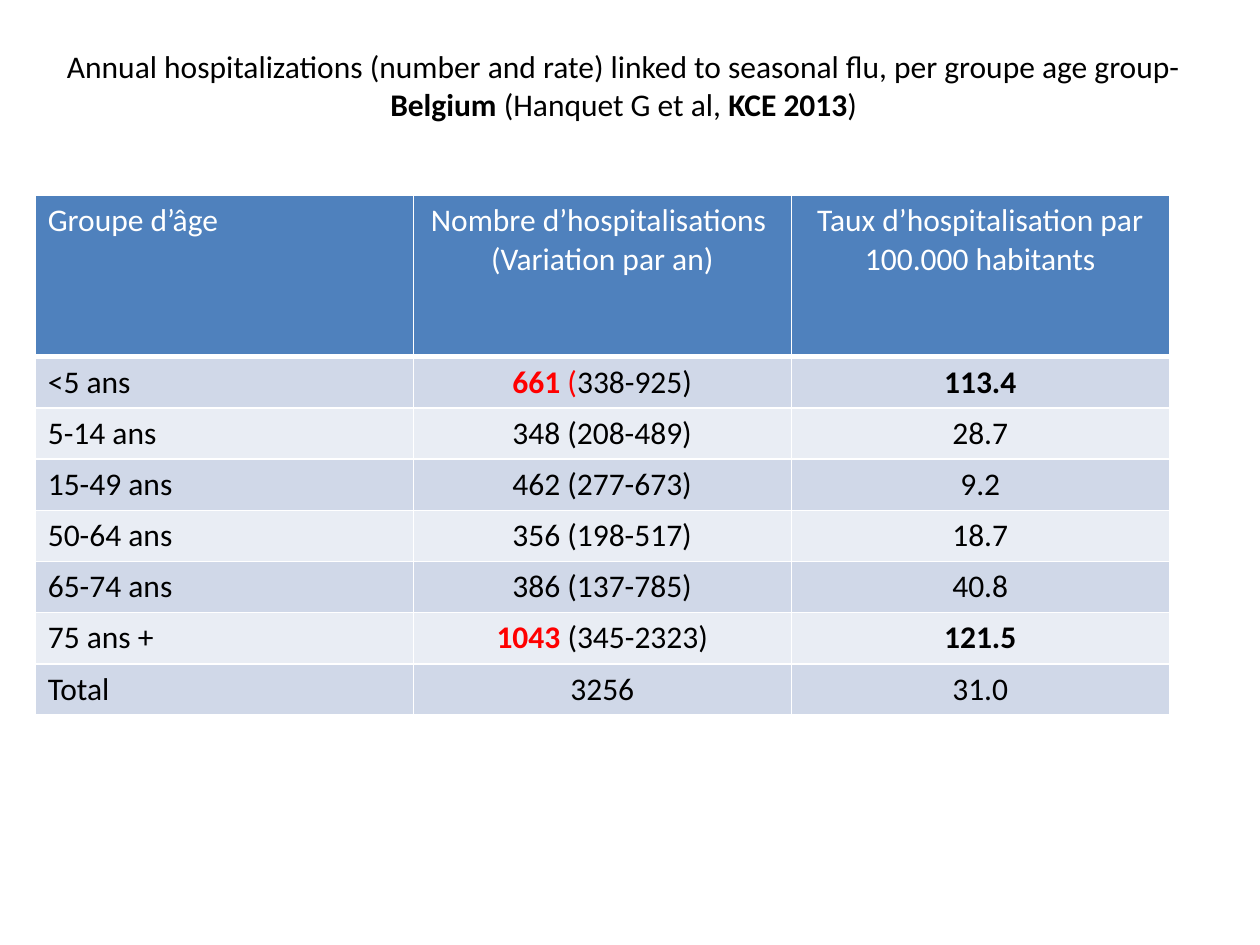
from lxml.etree import SubElement
from pptx import Presentation
from pptx.dml.color import RGBColor
from pptx.enum.text import MSO_ANCHOR, PP_ALIGN
from pptx.oxml.ns import qn
from pptx.util import Inches, Pt

BLACK = RGBColor(0x00, 0x00, 0x00)
WHITE = RGBColor(0xFF, 0xFF, 0xFF)
RED = RGBColor(0xFF, 0x00, 0x00)
HEADER_BLUE = RGBColor(0x4F, 0x81, 0xBD)
BAND_DARK = RGBColor(0xD0, 0xD8, 0xE8)
BAND_LIGHT = RGBColor(0xE9, 0xED, 0xF4)

TITLE = [
    ("Annual hospitalizations (number and rate) linked to seasonal flu, per groupe age group-",),
    ("Belgium ", True),
    ("(Hanquet G et al, ",),
    ("KCE 2013", True),
    (")",),
]

HEADERS = [
    [[("Groupe d’âge",)]],
    [[("Nombre d’hospitalisations ",)], [("(Variation par an)",)]],
    [[("Taux d’hospitalisation par 100.000 habitants",)]],
]

AGE_GROUPS = [
    ("<5 ans", [("661 ", True, RED), ("(", False, RED), ("338-925)",)], ("113.4", True)),
    ("5-14 ans", [("348 (208-489)",)], ("28.7",)),
    ("15-49 ans", [("462 (277-673)",)], ("9.2",)),
    ("50-64 ans", [("356 (198-517)",)], ("18.7",)),
    ("65-74 ans", [("386 (137-785)",)], ("40.8",)),
    ("75 ans +", [("1043 ", True, RED), ("(345-2323)",)], ("121.5", True)),
    ("Total", [("3256",)], ("31.0",)),
]


class FluSlide:
    font = "Calibri"
    size = Pt(18)

    def __init__(self, deck):
        self.width, self.height = deck.slide_width, deck.slide_height
        self.slide = deck.slides.add_slide(deck.slide_layouts[6])

    def place(self, left, top, width, height):
        return (int(left * self.width), int(top * self.height),
                int(width * self.width), int(height * self.height))

    def add_runs(self, frame, paragraphs, align, default_color=BLACK):
        for index, runs in enumerate(paragraphs):
            paragraph = frame.add_paragraph() if index else frame.paragraphs[0]
            paragraph.alignment = align
            for text, *style in runs:
                bold, color = style + [False, default_color][len(style):]
                run = paragraph.add_run()
                run.text = text
                run.font.name = self.font
                run.font.size = self.size
                run.font.bold = bold
                run.font.color.rgb = color

    def title(self, runs, *area):
        frame = self.slide.shapes.add_textbox(*self.place(*area)).text_frame
        frame.word_wrap = True
        frame.vertical_anchor = MSO_ANCHOR.MIDDLE
        self.add_runs(frame, [runs], PP_ALIGN.CENTER)

    def border(self, cell, **points):
        properties = cell._tc.get_or_add_tcPr()
        for side in "LRTB":
            line = SubElement(properties, qn(f"a:ln{side}"), w=str(int(Pt(points.get(side, 1)))))
            fill = SubElement(line, qn("a:solidFill"))
            SubElement(fill, qn("a:srgbClr"), val=str(WHITE))

    def table(self, rows, header_share, *area):
        left, top, width, height = self.place(*area)
        columns = len(rows[0])
        grid = self.slide.shapes.add_table(len(rows), columns, left, top, width, height).table
        header_height = int(height * header_share)
        body_height = (height - header_height) // (len(rows) - 1)
        for row_index, row in enumerate(rows):
            is_header = row_index == 0
            grid.rows[row_index].height = header_height if is_header else body_height
            band = HEADER_BLUE if is_header else (BAND_LIGHT, BAND_DARK)[row_index % 2]
            for column, paragraphs in enumerate(row):
                cell = grid.cell(row_index, column)
                self.border(cell, B=3 if is_header else 1, T=3 if row_index == 1 else 1)
                cell.fill.solid()
                cell.fill.fore_color.rgb = band
                self.add_runs(cell.text_frame, paragraphs,
                              PP_ALIGN.CENTER if column else PP_ALIGN.LEFT,
                              WHITE if is_header else BLACK)


def main():
    deck = Presentation()
    deck.slide_width, deck.slide_height = Inches(10), Inches(7.5)
    flu = FluSlide(deck)
    flu.title(TITLE, 0.035, 0.04, 0.92, 0.1)
    body = [[[[(age,)]], [count], [[rate]]] for age, count, rate in AGE_GROUPS]
    flu.table([HEADERS] + body, 0.31, 0.028, 0.207, 0.9, 0.55)
    deck.save("out.pptx")


if __name__ == "__main__":
    main()
